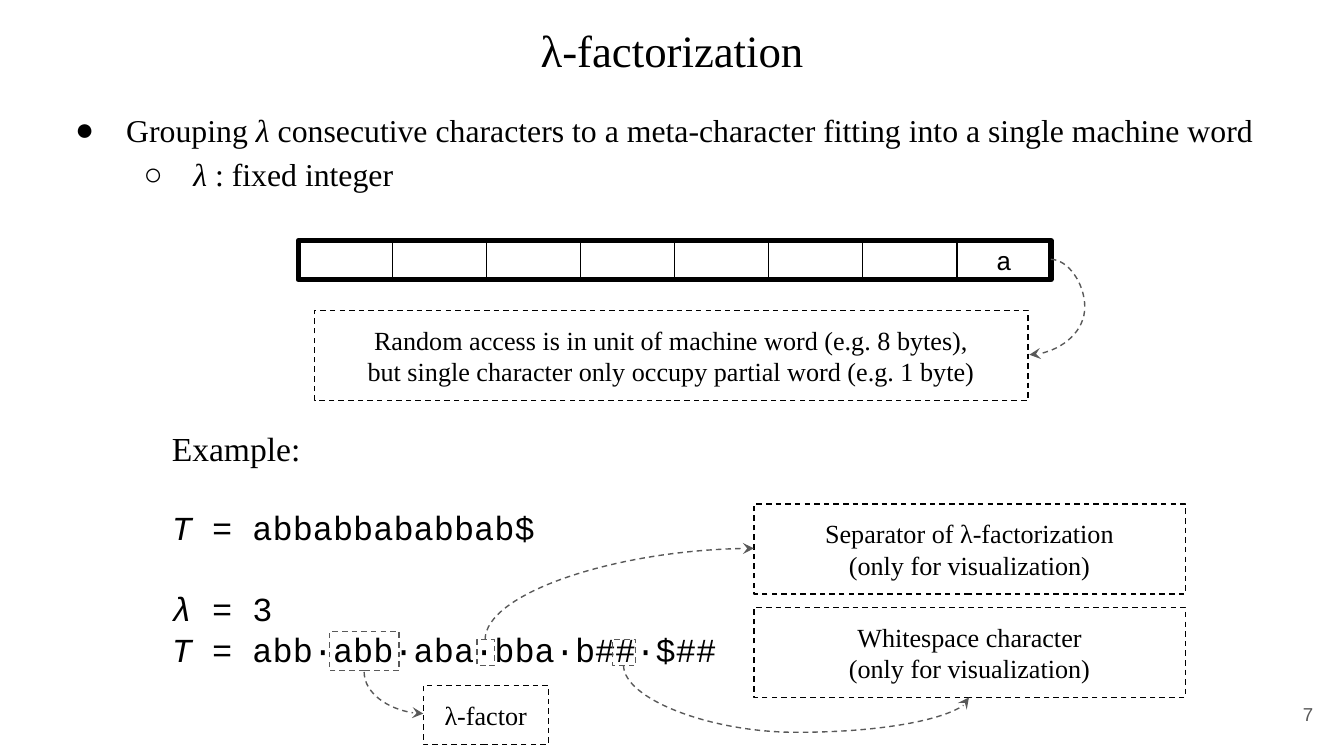
from lxml import etree
from pptx import Presentation
from pptx.dml.color import RGBColor
from pptx.enum.dml import MSO_LINE
from pptx.enum.shapes import MSO_CONNECTOR, MSO_SHAPE
from pptx.enum.text import MSO_ANCHOR, PP_ALIGN
from pptx.oxml.ns import qn
from pptx.util import Inches, Pt

LEFT, CENTER, RIGHT = PP_ALIGN.LEFT, PP_ALIGN.CENTER, PP_ALIGN.RIGHT
TOP, MIDDLE = MSO_ANCHOR.TOP, MSO_ANCHOR.MIDDLE
RECTANGLE, CURVE, DASH = MSO_SHAPE.RECTANGLE, MSO_CONNECTOR.CURVE, MSO_LINE.DASH

SERIF, MONO, SANS = "Times New Roman", "Courier New", "Arial"
BLACK, GRAY = "000000", "595959"
LINE_HEIGHT = 1.21  # line pitch as a multiple of the font size


def color(value):
    return RGBColor.from_string(value)


def prepare_frame(shape, anchor=TOP):
    frame = shape.text_frame
    frame.word_wrap = True
    frame.vertical_anchor = anchor
    frame.margin_left = frame.margin_right = Inches(0.1)
    frame.margin_top = frame.margin_bottom = Inches(0.1)
    return frame


def write_paragraph(frame, runs, size, font=SERIF, align=LEFT, ink=BLACK,
                    spacing=1, before=0):
    """Fill the next paragraph with (text, italic) runs."""
    paragraph = frame.paragraphs[-1]
    if paragraph.runs:
        paragraph = frame.add_paragraph()
    paragraph.alignment = align
    paragraph.line_spacing = Pt(round(size * LINE_HEIGHT * spacing, 1))
    paragraph.space_before = Pt(before)
    for text, italic in runs:
        run = paragraph.add_run()
        run.text = text
        run.font.name = font
        run.font.size = Pt(size)
        run.font.italic = italic
        run.font.color.rgb = color(ink)
    return paragraph


def add_text_box(slide, box, anchor=TOP):
    return prepare_frame(slide.shapes.add_textbox(*map(Inches, box)), anchor)


def add_outline(shapes, box, ink=BLACK, width=0.75, dashed=True):
    shape = shapes.add_shape(RECTANGLE, *map(Inches, box))
    shape.shadow.inherit = False
    shape.fill.background()
    shape.line.color.rgb = color(ink)
    shape.line.width = Pt(width)
    if dashed:
        shape.line.dash_style = DASH
    return shape


def add_note(slide, box, lines):
    frame = prepare_frame(add_outline(slide.shapes, box))
    for line in lines:
        write_paragraph(frame, [(line, False)], 14, align=CENTER)


def add_curve(slide, start, end, vertical=False, bend=None):
    """Dashed curved arrow; without a bend it is a quarter turn."""
    (x1, y1), (x2, y2) = start, end
    if vertical:
        # Lay the curve on its side around the same centre, then rotate it
        middle_x, middle_y = (x1 + x2) / 2, (y1 + y2) / 2
        half_x, half_y = (y2 - y1) / 2, (x2 - x1) / 2
        x1, x2 = middle_x + half_x, middle_x - half_x
        y1, y2 = middle_y - half_y, middle_y + half_y
    connector = slide.shapes.add_connector(CURVE, *map(Inches, (x1, y1, x2, y2)))
    connector.line.color.rgb = color(GRAY)
    connector.line.width = Pt(0.75)
    connector.line.dash_style = DASH
    properties = connector._element.spPr
    if vertical:
        properties.find(qn("a:xfrm")).set("rot", "16200000")
    geometry = properties.find(qn("a:prstGeom"))
    if bend is None:
        geometry.set("prst", "curvedConnector2")
    else:
        guides = geometry.find(qn("a:avLst"))
        etree.SubElement(guides, qn("a:gd"), name="adj1",
                         fmla=f"val {round(bend * 100000)}")
    etree.SubElement(properties.find(qn("a:ln")), qn("a:tailEnd"), type="stealth")
    etree.SubElement(properties, qn("a:effectLst"))


def add_bullet(paragraph, symbol, margin, indent):
    properties = paragraph._p.get_or_add_pPr()
    properties.set("marL", str(Inches(margin)))
    properties.set("indent", str(Inches(indent)))
    bullet_color = etree.SubElement(properties, qn("a:buClr"))
    etree.SubElement(bullet_color, qn("a:srgbClr"), val=BLACK)
    etree.SubElement(properties, qn("a:buFont"), typeface=SERIF)
    etree.SubElement(properties, qn("a:buChar"), char=symbol)


def add_heading(slide, box):
    frame = add_text_box(slide, box)
    write_paragraph(frame, [("λ-factorization", False)], 24, align=CENTER)


def add_definition(slide, box):
    frame = add_text_box(slide, box)
    grouping = write_paragraph(frame, [
        ("Grouping ", False), ("λ ", True),
        ("consecutive characters to a meta-character fitting into a single "
         "machine word", False)], 17, spacing=1.15)
    add_bullet(grouping, "●", 0.5, -0.38)
    integer = write_paragraph(
        frame, [("λ ", True), (": fixed integer", False)], 17, spacing=1.15)
    integer.level = 1
    add_bullet(integer, "○", 1, -0.37)


def add_machine_word(slide, box):
    """Row of bytes, its heavy frame, and the note it points to."""
    left, top, width, height = box
    cell_width = width / 8
    group = slide.shapes.add_group_shape()
    for column in (0, 1, 2, 3, 4, 6, 7):  # neighbours close the sixth cell
        cell = add_outline(group.shapes, (left + column * cell_width, top,
                                          cell_width, height), dashed=False)
    frame = prepare_frame(cell, MIDDLE)
    write_paragraph(frame, [("a", False)], 14, MONO, CENTER)
    add_outline(group.shapes, box, width=3, dashed=False)

    add_note(slide, (left + 0.12, top + 0.52, 5.31, 0.67), [
        "Random access is in unit of machine word (e.g. 8 bytes),",
        "but single character only occupy partial word (e.g. 1 byte)"])
    add_curve(slide, (left + width, top + 0.14), (left + 5.44, top + 0.85),
              bend=-1.58)


def add_example(slide, box):
    """Sample text with marked characters and their explanations."""
    left, top, width, height = box
    frame = add_text_box(slide, box)
    write_paragraph(frame, [("Example:", False)], 18)
    for runs, before in (
            ([("T", True), (" = abbabbababbab$", False)], 20.5),
            ([("λ = ", True), ("3", False)], 21.8),
            ([("T", True), (" = abb·abb·aba·bba·b##·$##", False)], 0)):
        write_paragraph(frame, runs, 18, MONO, before=before)

    # Marked characters
    for x, y, mark_width, mark_height in (
            (2.37, 1.68, 0.13, 0.19), (3.38, 1.68, 0.17, 0.19),
            (1.27, 1.62, 0.52, 0.29)):
        add_outline(slide.shapes, (left + x, top + y, mark_width, mark_height),
                    GRAY)

    # Explanations
    for x, y, note_width, note_height, lines in (
            (4.43, 0.67, 3.21, 0.67,
             ["Separator of λ-factorization", "(only for visualization)"]),
            (4.43, 1.44, 3.21, 0.67,
             ["Whitespace character", "(only for visualization)"]),
            (1.97, 2.02, 0.93, 0.44, ["λ-factor"])):
        add_note(slide, (left + x, top + y, note_width, note_height), lines)

    # Arrows from each mark to its explanation
    for start, end, bend in (
            ((2.43, 1.68), (4.43, 1), None),
            ((3.46, 1.87), (6.03, 2.11), 2.08),
            ((1.53, 1.92), (1.97, 2.23), None)):
        add_curve(slide, (left + start[0], top + start[1]),
                  (left + end[0], top + end[1]), vertical=True, bend=bend)


def add_page_number(slide, box):
    frame = add_text_box(slide, box, MIDDLE)
    write_paragraph(frame, [("7", False)], 10, SANS, RIGHT, GRAY)


def main():
    presentation = Presentation()
    presentation.slide_width = Inches(10)
    presentation.slide_height = Inches(10) * 9 // 16
    slide = presentation.slides.add_slide(presentation.slide_layouts[6])
    add_definition(slide, (0.34, 0.68, 9.32, 0.88))
    add_heading(slide, (0.34, 0.07, 9.32, 0.63))
    add_machine_word(slide, (2.22, 1.79, 5.6, 0.29))
    add_example(slide, (1.18, 3.08, 4.61, 2.02))
    add_page_number(slide, (9.27, 5.1, 0.6, 0.43))
    presentation.save("out.pptx")


if __name__ == "__main__":
    main()
